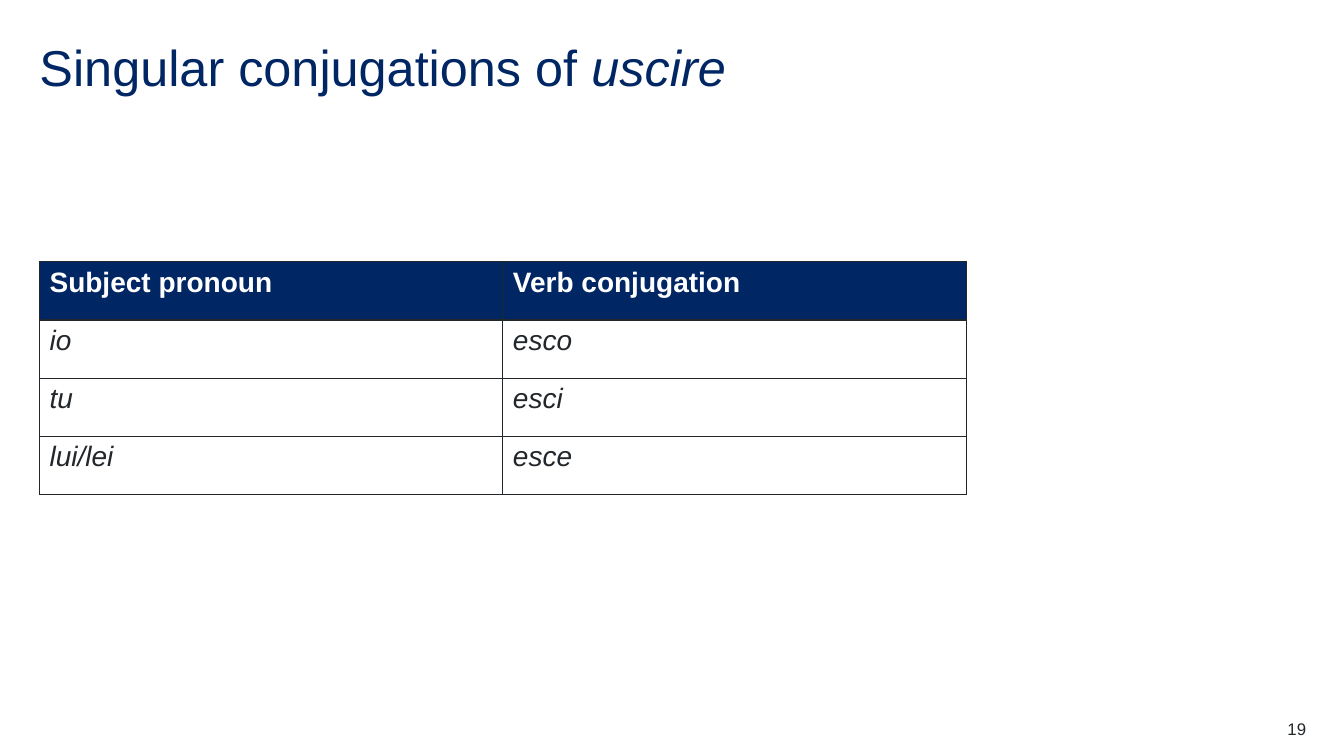
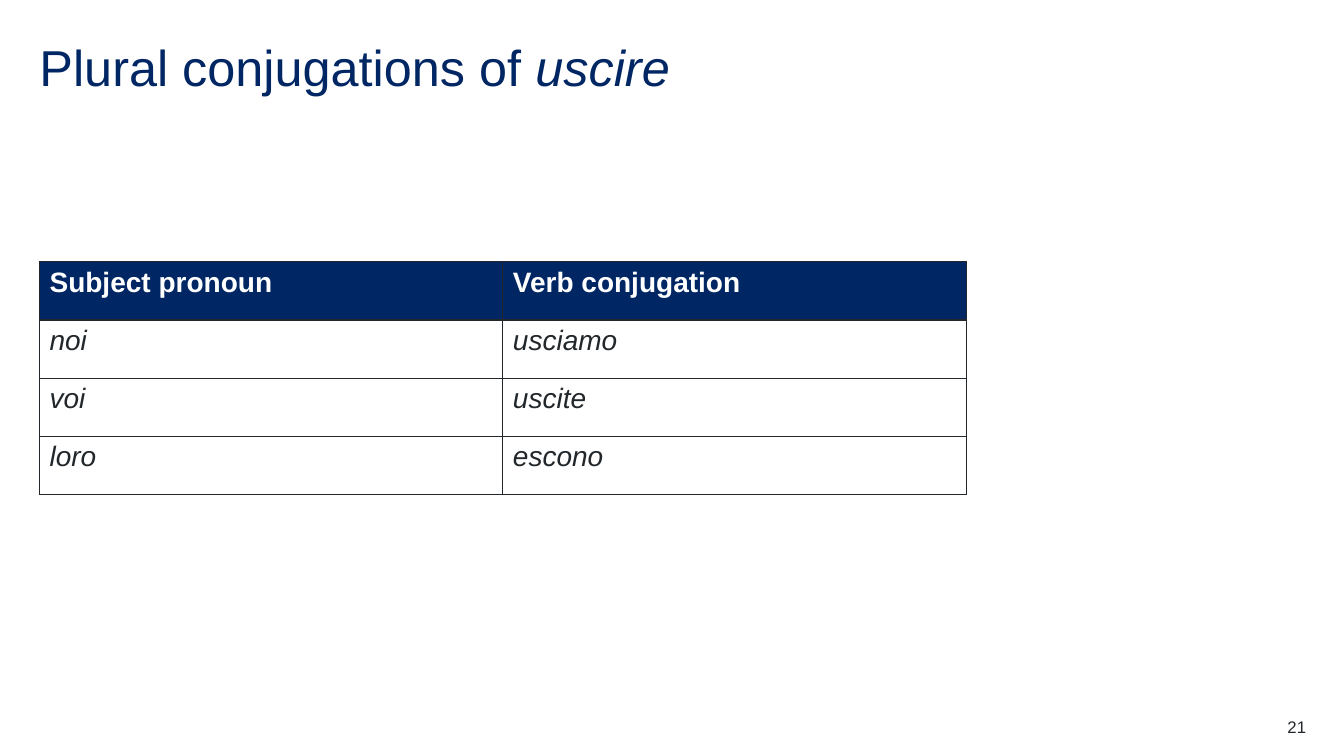
from dataclasses import dataclass

from lxml.etree import SubElement
from pptx import Presentation
from pptx.dml.color import RGBColor
from pptx.enum.text import MSO_ANCHOR, MSO_AUTO_SIZE, PP_ALIGN
from pptx.oxml.ns import qn
from pptx.slide import Slide
from pptx.table import _Cell
from pptx.text.text import Font, TextFrame
from pptx.util import Pt

COLORS = {"navy": "002664", "ink": "22272B", "white": "FFFFFF"}
FONT_NAME = "Arial"
VERB = "uscire"
HEADINGS = ("Subject pronoun", "Verb conjugation")

LEFT = 28.2
TITLE_WIDTH, TITLE_HEIGHT = 904, 43.2
TABLE_TOP = 187
COLUMN_WIDTH, ROW_HEIGHT = 331, 41.6
BORDER_WIDTH = 1


@dataclass(frozen=True)
class ConjugationSlide:
    title: str
    conjugations: tuple[tuple[str, str], ...]
    number: int
    number_spacing: float


SLIDES = (
    ConjugationSlide(
        "Singular conjugations of ",
        (("io", "esco"), ("tu", "esci"), ("lui/lei", "esce")),
        19,
        1.0,
    ),
    ConjugationSlide(
        "Plural conjugations of ",
        (("noi", "usciamo"), ("voi", "uscite"), ("loro", "escono")),
        21,
        0.9,
    ),
)


def style_font(font: Font, size: float, color: str) -> None:
    font.name = FONT_NAME
    font.size = Pt(size)
    font.color.rgb = RGBColor.from_string(COLORS[color])


def clear_frame(frame: TextFrame, anchor: MSO_ANCHOR) -> None:
    """Remove the insets and automatic sizing, and anchor the text."""
    frame.margin_left = frame.margin_right = Pt(0)
    frame.margin_top = frame.margin_bottom = Pt(0)
    frame.word_wrap = True
    frame.auto_size = MSO_AUTO_SIZE.NONE
    frame.vertical_anchor = anchor


def add_title(slide: Slide, text: str) -> None:
    title = slide.shapes.title
    title.left, title.top = Pt(LEFT), Pt(LEFT)
    title.width, title.height = Pt(TITLE_WIDTH), Pt(TITLE_HEIGHT)
    clear_frame(title.text_frame, MSO_ANCHOR.MIDDLE)
    paragraph = title.text_frame.paragraphs[0]
    paragraph.alignment = PP_ALIGN.LEFT
    paragraph.line_spacing = 0.9
    style_font(paragraph.font, 36, "navy")
    paragraph.add_run().text = text
    verb = paragraph.add_run()
    verb.text = VERB
    verb.font.italic = True


def add_borders(cell: _Cell) -> None:
    properties = cell._tc.get_or_add_tcPr()
    for side in ("a:lnL", "a:lnR", "a:lnT", "a:lnB"):
        line = SubElement(properties, qn(side), w=str(Pt(BORDER_WIDTH)))
        fill = SubElement(line, qn("a:solidFill"))
        SubElement(fill, qn("a:srgbClr"), val=COLORS["ink"])


def fill_cell(cell: _Cell, text: str, is_heading: bool) -> None:
    add_borders(cell)
    cell.fill.solid()
    background = "navy" if is_heading else "white"
    cell.fill.fore_color.rgb = RGBColor.from_string(COLORS[background])
    cell.text = text
    font = cell.text_frame.paragraphs[0].font
    style_font(font, 20, "white" if is_heading else "ink")
    font.bold = is_heading
    font.italic = not is_heading


def add_conjugation_table(slide: Slide, conjugations: tuple[tuple[str, str], ...]) -> None:
    rows = (HEADINGS, *conjugations)
    table = slide.shapes.add_table(
        len(rows), len(HEADINGS), Pt(LEFT), Pt(TABLE_TOP),
        Pt(COLUMN_WIDTH * len(HEADINGS)), Pt(ROW_HEIGHT * len(rows)),
    ).table
    table.horz_banding = False
    for row_index, row in enumerate(rows):
        for column_index, text in enumerate(row):
            fill_cell(table.cell(row_index, column_index), text, row_index == 0)


def add_slide_number(slide: Slide, number: int, spacing: float) -> None:
    box = slide.shapes.add_textbox(Pt(876), Pt(513.4), Pt(57), Pt(14.4))
    clear_frame(box.text_frame, MSO_ANCHOR.TOP)
    paragraph = box.text_frame.paragraphs[0]
    paragraph.text = str(number)
    paragraph.alignment = PP_ALIGN.RIGHT
    paragraph.line_spacing = spacing
    style_font(paragraph.font, 12, "ink")


def main() -> None:
    presentation = Presentation()
    presentation.slide_width, presentation.slide_height = Pt(960), Pt(540)
    title_only = presentation.slide_layouts.get_by_name("Title Only")
    for content in SLIDES:
        slide = presentation.slides.add_slide(title_only)
        add_title(slide, content.title)
        add_conjugation_table(slide, content.conjugations)
        add_slide_number(slide, content.number, content.number_spacing)
    presentation.save("out.pptx")


if __name__ == "__main__":
    main()
